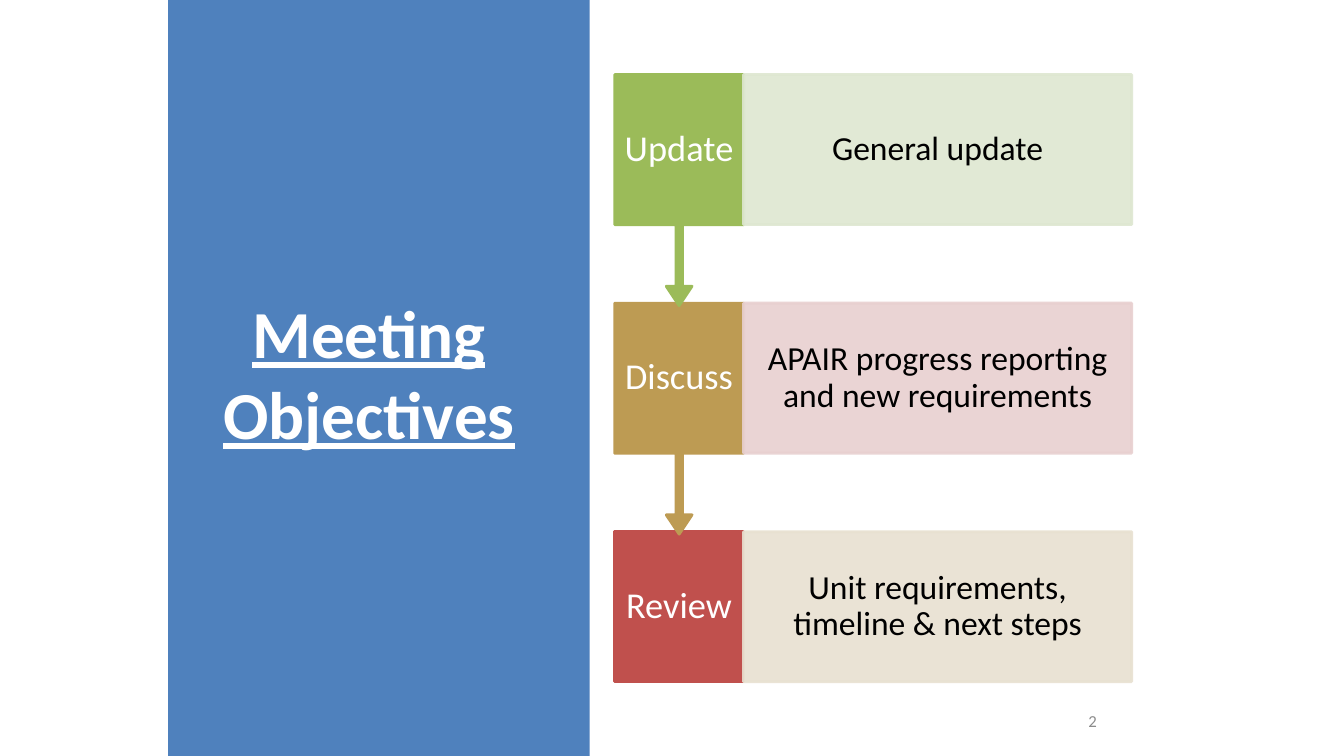
from dataclasses import dataclass

from lxml.etree import SubElement
from pptx import Presentation
from pptx.dml.color import RGBColor
from pptx.enum.shapes import MSO_SHAPE as Preset
from pptx.enum.text import MSO_ANCHOR as Anchor, PP_ALIGN as Align
from pptx.oxml.ns import qn
from pptx.shapes.autoshape import Shape
from pptx.slide import Slide
from pptx.util import Cm, Pt

WHITE = RGBColor(0xFF, 0xFF, 0xFF)
BLACK = RGBColor(0x00, 0x00, 0x00)
GREY = RGBColor(0x8C, 0x8C, 0x8C)
BLUE = RGBColor(0x4F, 0x81, 0xBD)
GREEN = RGBColor(0x9B, 0xBB, 0x59)
OCHRE = RGBColor(0xBD, 0x9B, 0x53)
RED = RGBColor(0xC0, 0x50, 0x4D)
PALE_GREEN = RGBColor(0xDE, 0xE7, 0xD1)
PALE_PINK = RGBColor(0xE8, 0xD0, 0xD0)
PALE_SAND = RGBColor(0xE8, 0xE1, 0xD1)

FONT = "Calibri"
FIRST_TOP, PITCH = 1.88, 5.76
BOX_HEIGHT, CALLOUT_HEIGHT = 3.78, 5.82
LABEL_LEFT, LABEL_WIDTH = 15.49, 3.25
DETAIL_LEFT, DETAIL_WIDTH = LABEL_LEFT + LABEL_WIDTH, 9.78
CALLOUT_ADJUSTMENTS = (0.05, 0.1, 0.15, 0.65)


@dataclass(frozen=True)
class Area:
    left: float
    top: float
    width: float
    height: float

    def lengths(self) -> tuple[Cm, Cm, Cm, Cm]:
        return Cm(self.left), Cm(self.top), Cm(self.width), Cm(self.height)


@dataclass(frozen=True)
class TextStyle:
    size: float
    color: RGBColor
    align: Align = Align.CENTER
    emphasis: bool = False
    inset_x: float = 0.25
    inset_y: float = 0.13
    line_spacing: float = 1.0
    space_after: float = 0


@dataclass(frozen=True)
class Objective:
    label: str
    detail: str
    color: RGBColor
    pale: RGBColor


TITLE_STYLE = TextStyle(48, WHITE, emphasis=True)
NUMBER_STYLE = TextStyle(12, GREY, Align.RIGHT, space_after=6)
LABEL_STYLE = TextStyle(26, WHITE, inset_x=0.23, inset_y=0.51, line_spacing=0.9)
DETAIL_STYLE = TextStyle(24, BLACK, inset_x=0.2, inset_y=0.84, line_spacing=0.9)

OBJECTIVES = [
    Objective("Update", "General update", GREEN, PALE_GREEN),
    Objective("Discuss", "APAIR progress reporting and new requirements", OCHRE, PALE_PINK),
    Objective("Review", "Unit requirements, timeline & next steps", RED, PALE_SAND),
]


def write_text(box: Shape, text: str, style: TextStyle) -> None:
    frame = box.text_frame
    frame.text = text
    frame.word_wrap = True
    frame.vertical_anchor = Anchor.MIDDLE
    frame.margin_left = frame.margin_right = Cm(style.inset_x)
    frame.margin_top = frame.margin_bottom = Cm(style.inset_y)
    para = frame.paragraphs[0]
    para.alignment = style.align
    para.line_spacing = style.line_spacing
    para.space_after = Pt(style.space_after)
    for span in para.runs:
        span.font.name = FONT
        span.font.size = Pt(style.size)
        span.font.color.rgb = style.color
        span.font.bold = style.emphasis
        span.font.underline = style.emphasis


def add_text(page: Slide, area: Area, text: str, style: TextStyle) -> None:
    write_text(page.shapes.add_textbox(*area.lengths()), text, style)


def add_block(page: Slide, preset: Preset, area: Area, color: RGBColor, outlined: bool = True) -> Shape:
    block = page.shapes.add_shape(preset, *area.lengths())
    block.shadow.inherit = False
    block.fill.solid()
    block.fill.fore_color.rgb = color
    if outlined:
        block.line.color.rgb = color
        block.line.width = Pt(2)
    else:
        block.line.fill.background()
    return block


def set_opacity(block: Shape, percent: int) -> None:
    for color in block._element.spPr.iter(qn("a:srgbClr")):
        SubElement(color, qn("a:alpha")).set("val", str(percent * 1000))


def add_detail(page: Slide, objective: Objective, top: float) -> None:
    area = Area(DETAIL_LEFT, top, DETAIL_WIDTH, BOX_HEIGHT)
    block = add_block(page, Preset.RECTANGLE, area, objective.pale)
    set_opacity(block, 90)
    write_text(block, objective.detail, DETAIL_STYLE)


def add_label(page: Slide, objective: Objective, top: float, leads_on: bool) -> None:
    area = Area(LABEL_LEFT, top, LABEL_WIDTH, BOX_HEIGHT)
    if not leads_on:
        block = add_block(page, Preset.RECTANGLE, area, objective.color)
        write_text(block, objective.label, LABEL_STYLE)
        return
    callout_area = Area(LABEL_LEFT, top, LABEL_WIDTH, CALLOUT_HEIGHT)
    callout = add_block(page, Preset.UP_ARROW_CALLOUT, callout_area, objective.color)
    callout.rotation = 180
    for index, value in enumerate(CALLOUT_ADJUSTMENTS):
        callout.adjustments[index] = value
    add_text(page, area, objective.label, LABEL_STYLE)


def main() -> None:
    deck = Presentation()
    deck.slide_width, deck.slide_height = Cm(33.87), Cm(19.05)
    page = deck.slides.add_slide(deck.slide_layouts[6])

    add_block(page, Preset.RECTANGLE, Area(4.24, 0, 10.62, 19.05), BLUE, outlined=False)
    add_text(page, Area(5.33, 1.73, 7.94, 15.29), "Meeting Objectives", TITLE_STYLE)
    add_text(page, Area(22.17, 17.65, 5.72, 1.02), "2", NUMBER_STYLE)

    last = len(OBJECTIVES) - 1
    for index, objective in reversed(list(enumerate(OBJECTIVES))):
        top = FIRST_TOP + index * PITCH
        add_label(page, objective, top, index < last)
        add_detail(page, objective, top)

    deck.save("out.pptx")


if __name__ == "__main__":
    main()
